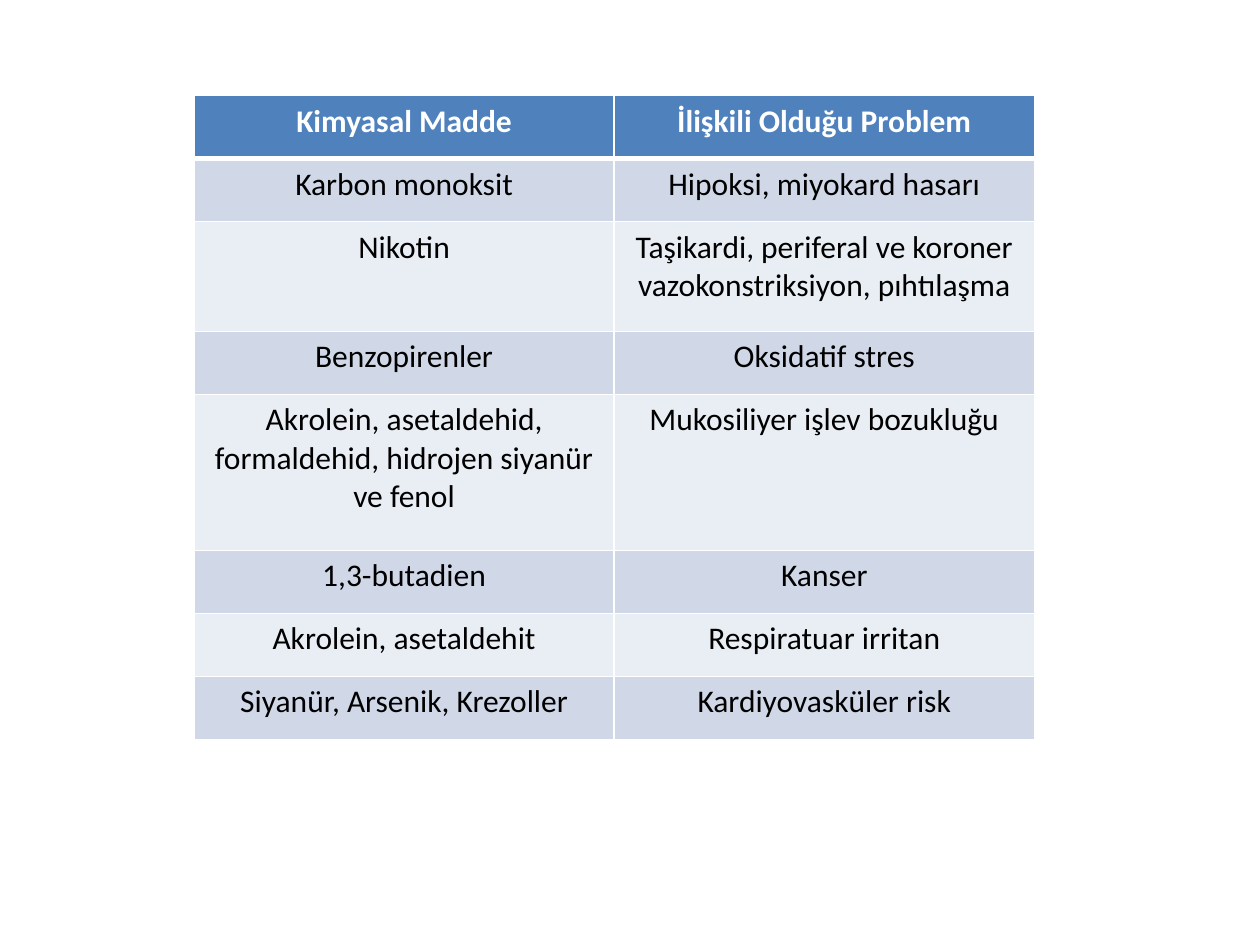
from lxml.etree import SubElement
from pptx import Presentation
from pptx.dml.color import RGBColor
from pptx.enum.text import PP_ALIGN as Align
from pptx.oxml.ns import qn
from pptx.util import Inches, Pt

HEADER_FILL, BAND_FILLS = "4F81BD", ("D0D8E8", "E9EDF4")
WHITE, BLACK = "FFFFFF", "000000"
ROW = 0.5
TALL_ROWS = {2: 0.87, 4: 1.24}

SUBSTANCES = [
    ("Kimyasal Madde", "İlişkili Olduğu Problem"),
    ("Karbon monoksit", "Hipoksi, miyokard hasarı"),
    ("Nikotin", "Taşikardi, periferal ve koroner vazokonstriksiyon, pıhtılaşma"),
    ("Benzopirenler", "Oksidatif stres"),
    ("Akrolein, asetaldehid, formaldehid, hidrojen siyanür ve fenol",
     "Mukosiliyer işlev bozukluğu"),
    ("1,3-butadien", "Kanser"),
    ("Akrolein, asetaldehit", "Respiratuar irritan"),
    ("Siyanür, Arsenik, Krezoller", "Kardiyovasküler risk"),
]


def color(hex_text):
    return RGBColor.from_string(hex_text)


def write(frame, text, size=18, ink=BLACK, bold=False, align=Align.CENTER):
    paragraph = frame.paragraphs[0]
    paragraph.alignment = align
    run = paragraph.add_run()
    run.text = text
    font = run.font
    font.name, font.size, font.bold = "Calibri", Pt(size), bold
    font.color.rgb = color(ink)


def set_borders(cell, ink=WHITE, **widths):
    """Draw the sides L, R, T and B; must run before the cell is filled."""
    properties = cell._tc.get_or_add_tcPr()
    for side in "LRTB":
        line = SubElement(properties, qn(f"a:ln{side}"), w=str(Pt(widths.get(side, 1))))
        fill = SubElement(line, qn("a:solidFill"))
        SubElement(fill, qn("a:srgbClr"), val=ink)


def add_substance_table(slide, left, top, width):
    heights = [TALL_ROWS.get(i, ROW) for i in range(len(SUBSTANCES))]
    table = slide.shapes.add_table(
        len(SUBSTANCES), len(SUBSTANCES[0]),
        Inches(left), Inches(top), Inches(width), Inches(sum(heights))).table
    for i, (height, texts) in enumerate(zip(heights, SUBSTANCES)):
        table.rows[i].height = Inches(height)
        header = i == 0
        for j, text in enumerate(texts):
            cell = table.cell(i, j)
            set_borders(cell, T=3 if i == 1 else 1, B=3 if header else 1)
            cell.fill.solid()
            cell.fill.fore_color.rgb = color(HEADER_FILL if header else BAND_FILLS[(i - 1) % 2])
            write(cell.text_frame, text, ink=WHITE if header else BLACK, bold=header)


def main():
    deck = Presentation()
    deck.slide_width, deck.slide_height = Inches(10), Inches(7.5)
    slide = deck.slides.add_slide(deck.slide_layouts[6])
    add_substance_table(slide, left=1.54, top=0.76, width=6.67)
    deck.save("out.pptx")


if __name__ == "__main__":
    main()
